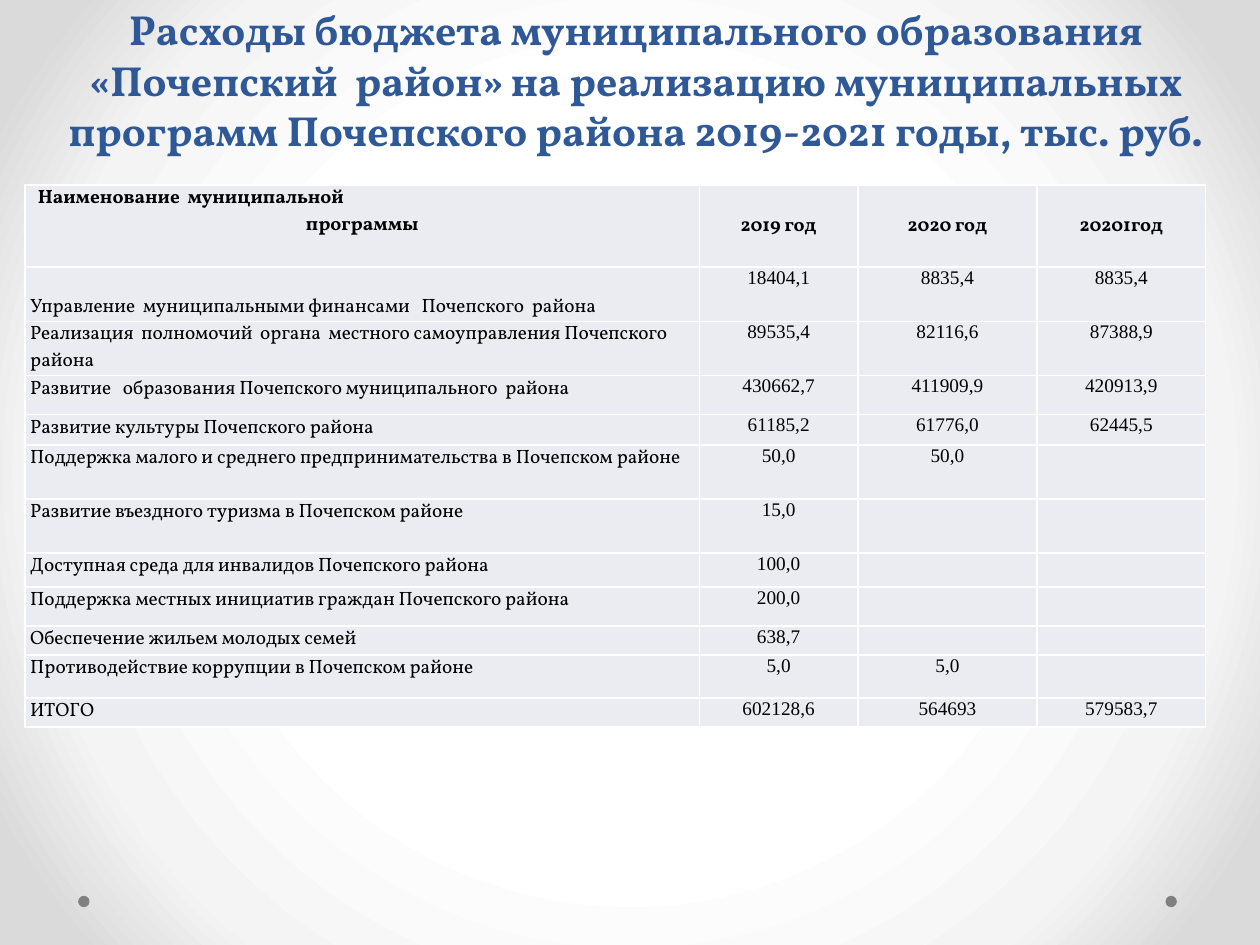
from lxml import etree
from pptx import Presentation
from pptx.dml.color import RGBColor
from pptx.enum.shapes import MSO_SHAPE
from pptx.enum.text import MSO_ANCHOR, PP_ALIGN
from pptx.oxml import parse_xml
from pptx.oxml.ns import qn
from pptx.util import Inches, Pt

LEFT, CENTER = PP_ALIGN.LEFT, PP_ALIGN.CENTER
TOP, MIDDLE, BOTTOM = MSO_ANCHOR.TOP, MSO_ANCHOR.MIDDLE, MSO_ANCHOR.BOTTOM
OVAL = MSO_SHAPE.OVAL
BLUE = RGBColor(0x2F, 0x58, 0x97)
BLACK = RGBColor(0, 0, 0)
WHITE = RGBColor(0xFF, 0xFF, 0xFF)
GRAY = RGBColor(0x80, 0x80, 0x80)
PALE = RGBColor(0xEA, 0xEC, 0xF2)
LIGHT = RGBColor(0xF4, 0xF4, 0xF4)
EDGE = RGBColor(0xDA, 0xDA, 0xDA)
SERIF, NUMERIC = "Vollkorn", "Times New Roman"


def write(paragraph, text, size=11, font=SERIF, color=BLACK, bold=False, align=LEFT, indent=0):
    paragraph.alignment = align
    if indent:
        paragraph._p.get_or_add_pPr().set("marL", str(Inches(indent)))
    if not text:
        paragraph._p.get_or_add_endParaRPr().set("sz", str(size * 100))
        return
    run = paragraph.add_run()
    run.text = text
    run.font.size = Pt(size)
    run.font.name = font
    run.font.bold = bold
    run.font.color.rgb = color


def style_cell(cell, anchor):
    cell.margin_left = cell.margin_right = Inches(0.04)
    cell.margin_top = cell.margin_bottom = 0
    cell.vertical_anchor = anchor
    properties = cell._tc.get_or_add_tcPr()
    for side in ("a:lnL", "a:lnR", "a:lnT", "a:lnB"):
        border = etree.SubElement(properties, qn(side), w=str(Pt(1)))
        border_fill = etree.SubElement(border, qn("a:solidFill"))
        etree.SubElement(border_fill, qn("a:srgbClr"), val=str(WHITE))
    cell.fill.solid()
    cell.fill.fore_color.rgb = PALE


prs = Presentation()
prs.slide_width, prs.slide_height = Inches(10), Inches(7.5)
slide = prs.slides.add_slide(prs.slide_layouts[6])

stops = "".join(
    f'<a:gs pos="{percent * 1000}"><a:srgbClr val="{color}"/></a:gs>'
    for percent, color in ((50, WHITE), (76, LIGHT), (92, EDGE))
)
background = parse_xml(
    '<p:bg xmlns:p="http://schemas.openxmlformats.org/presentationml/2006/main"'
    ' xmlns:a="http://schemas.openxmlformats.org/drawingml/2006/main">'
    f'<p:bgPr><a:gradFill rotWithShape="1"><a:gsLst>{stops}</a:gsLst>'
    '<a:path path="circle"><a:fillToRect l="50000" t="50000" r="50000" b="50000"/></a:path>'
    '</a:gradFill><a:effectLst/></p:bgPr></p:bg>'
)
slide.element.cSld.insert(0, background)

for dot_left in (9.25, 0.62):
    dot = slide.shapes.add_shape(OVAL, Inches(dot_left), Inches(7.11), Inches(0.09), Inches(0.09))
    dot.shadow.inherit = False
    dot.fill.solid()
    dot.fill.fore_color.rgb = GRAY
    dot.line.fill.background()

YEARS = ("2019 год", "2020 год", "20201год")
PROGRAMS = [
    ("Управление  муниципальными финансами   Почепского  района", "18404,1", "8835,4", "8835,4"),
    ("Реализация  полномочий  органа  местного самоуправления Почепского района",
     "89535,4", "82116,6", "87388,9"),
    ("Развитие   образования Почепского муниципального  района",
     "430662,7", "411909,9", "420913,9"),
    ("Развитие культуры Почепского района", "61185,2", "61776,0", "62445,5"),
    ("Поддержка малого и среднего предпринимательства в Почепском районе", "50,0", "50,0", ""),
    ("Развитие въездного туризма в Почепском районе", "15,0", "", ""),
    ("Доступная среда для инвалидов Почепского района", "100,0", "", ""),
    ("Поддержка местных инициатив граждан Почепского района", "200,0", "", ""),
    ("Обеспечение жильем молодых семей", "638,7", "", ""),
    ("Противодействие коррупции в Почепском районе", "5,0", "5,0", ""),
    ("ИТОГО", "602128,6", "564693", "579583,7"),
]
COLUMN_WIDTHS = (5.35, 1.26, 1.42, 1.34)
ROW_HEIGHTS = (0.65, 0.43, 0.43, 0.31, 0.24, 0.43, 0.43, 0.27, 0.31, 0.23, 0.34, 0.23)

budget = slide.shapes.add_table(
    len(ROW_HEIGHTS), len(COLUMN_WIDTHS), Inches(0.2), Inches(1.47),
    Inches(sum(COLUMN_WIDTHS)), Inches(sum(ROW_HEIGHTS)),
).table
budget.first_row = budget.horz_banding = False
for column, width in zip(budget.columns, COLUMN_WIDTHS):
    column.width = Inches(width)
for row, height in zip(budget.rows, ROW_HEIGHTS):
    row.height = Inches(height)

program_heading = budget.cell(0, 0)
style_cell(program_heading, TOP)
heading_frame = program_heading.text_frame
write(heading_frame.paragraphs[0], "Наименование  муниципальной", bold=True, indent=0.06)
write(heading_frame.add_paragraph(), "программы", bold=True, align=CENTER)
for column_index, year in enumerate(YEARS, 1):
    year_heading = budget.cell(0, column_index)
    style_cell(year_heading, MIDDLE)
    write(year_heading.text_frame.paragraphs[0], year, bold=True, align=CENTER)

for row_index, (program, *amounts) in enumerate(PROGRAMS, 1):
    program_cell = budget.cell(row_index, 0)
    style_cell(program_cell, BOTTOM if row_index == 1 else TOP)
    write(program_cell.text_frame.paragraphs[0], program)
    for column_index, amount in enumerate(amounts, 1):
        amount_cell = budget.cell(row_index, column_index)
        style_cell(amount_cell, TOP)
        write(amount_cell.text_frame.paragraphs[0], amount, font=NUMERIC, align=CENTER)

title = slide.shapes.add_textbox(Inches(0.2), Inches(0.03), Inches(9.69), Inches(1.25)).text_frame
title.word_wrap = True
title.vertical_anchor = BOTTOM
write(
    title.paragraphs[0],
    "Расходы бюджета муниципального образования «Почепский  район» на реализацию "
    "муниципальных программ Почепского района 2019-2021 годы, тыс. руб.",
    size=24, color=BLUE, bold=True, align=CENTER,
)

prs.save("out.pptx")
